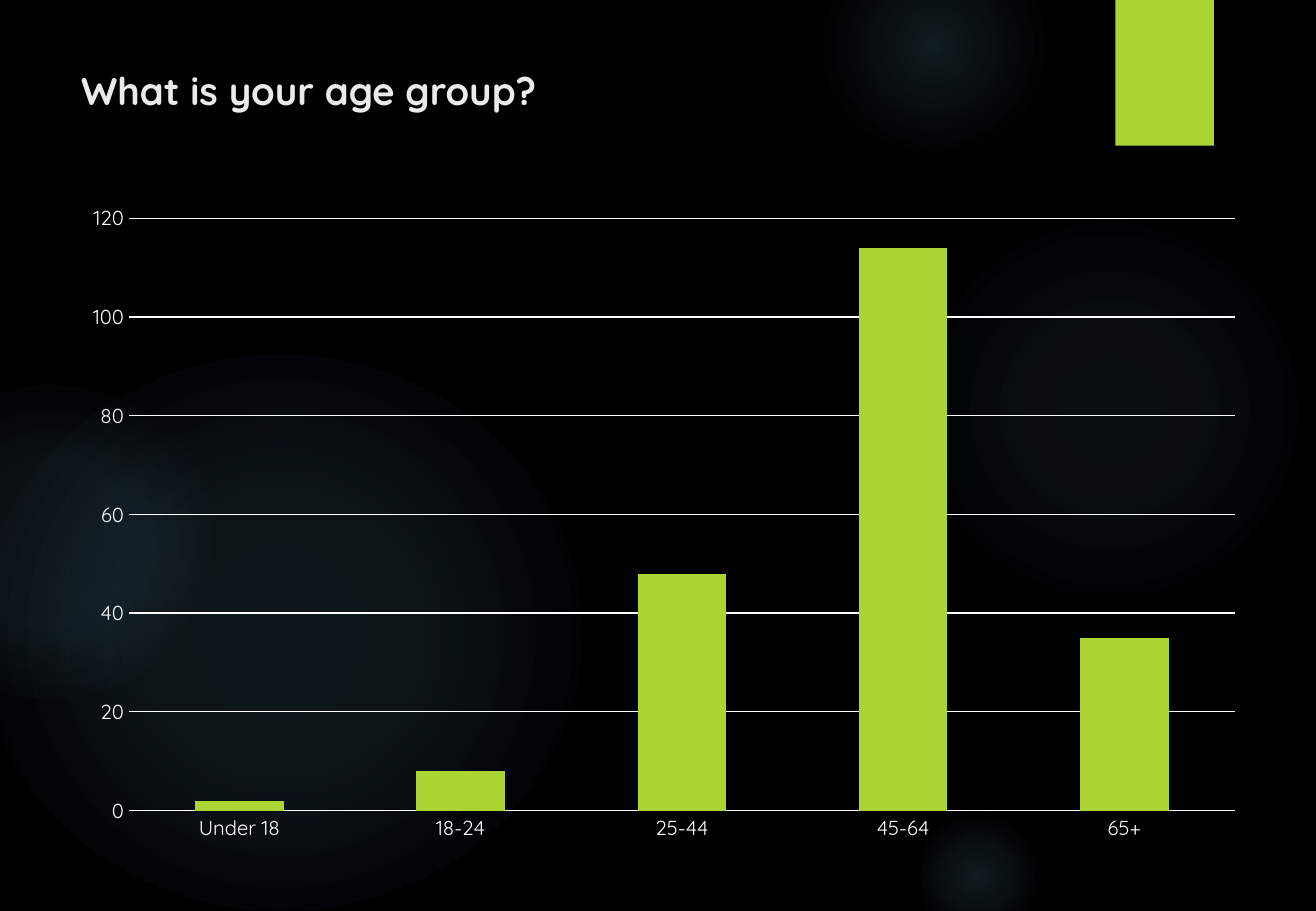
from lxml import etree
from pptx import Presentation
from pptx.chart.data import CategoryChartData as ChartData
from pptx.dml.color import RGBColor
from pptx.enum.chart import XL_CHART_TYPE as Chart, XL_TICK_MARK as Tick
from pptx.enum.shapes import MSO_SHAPE as Shape
from pptx.enum.text import MSO_ANCHOR as Anchor, PP_ALIGN as Align
from pptx.oxml import parse_xml
from pptx.oxml.ns import nsdecls, qn
from pptx.util import Inches, Pt

FONT = "Quicksand"
BLACK, WHITE, PALE = "000000", "FFFFFF", "EBEBEB"
GREEN, BLUE = "ACD433", "7AC4F0"

# Each glow: left, top, width, height, then (position %, opacity %) stops
GLOWS = [
    (7.46, 1.83, 3.34, 3.08, [(0, 7), (36, 6), (69, 0)]),
    (6.74, -0.5, 1.9, 1.75, [(0, 14), (36, 7), (73, 0)]),
    (7.46, 6.67, 1.17, 1.08, [(0, 14), (36, 7), (66, 0)]),
    (-0.18, 2.92, 4.97, 4.58, [(0, 11), (36, 10), (75, 0)]),
    (-0.99, 3.17, 2.8, 2.58, [(0, 8), (36, 8), (72, 0)]),
]
AGES = {"Under 18": 2, "18-24": 8, "25-44": 48, "45-64": 114, "65+": 35}
PLOT = {"x": 0.05, "y": 0.04, "w": 0.93, "h": 0.9}


def color(code):
    return RGBColor.from_string(code)


def paint(fill, code):
    fill.solid()
    fill.fore_color.rgb = color(code)


def style(font, size, code, bold=False):
    font.name = FONT
    font.size = Pt(size)
    font.bold = bold
    font.color.rgb = color(code)


def add_block(slide, kind, box, code):
    shape = slide.shapes.add_shape(kind, *map(Inches, box))
    shape.shadow.inherit = False
    shape.line.fill.background()
    paint(shape.fill, code)
    return shape


def add_glow(slide, box, stops):
    glow = add_block(slide, Shape.OVAL, box, BLUE)
    marks = "".join(
        f'<a:gs pos="{pos * 1000}"><a:srgbClr val="{BLUE}">'
        f'<a:alpha val="{alpha * 1000}"/></a:srgbClr></a:gs>'
        for pos, alpha in stops)
    grad = parse_xml(
        f'<a:gradFill {nsdecls("a")}><a:gsLst>{marks}</a:gsLst>'
        '<a:path path="circle"><a:fillToRect l="50000" t="50000" '
        'r="50000" b="50000"/></a:path></a:gradFill>')
    props = glow.element.spPr
    props.replace(props.find(qn("a:solidFill")), grad)


def add_title(slide, text, box):
    frame = slide.shapes.add_textbox(*map(Inches, box)).text_frame
    frame.word_wrap = True
    frame.vertical_anchor = Anchor.TOP
    para = frame.paragraphs[0]
    para.text = text
    para.alignment = Align.JUSTIFY
    style(para.font, 22.8, PALE, True)


def set_plot(chart):
    """Fix the inner plot area as fractions of the chart."""
    area = chart.element.find(".//" + qn("c:plotArea"))
    old = area.find(qn("c:layout"))
    if old is not None:
        area.remove(old)
    layout = etree.Element(qn("c:layout"))
    manual = etree.SubElement(layout, qn("c:manualLayout"))
    parts = {"layoutTarget": "inner", "xMode": "edge", "yMode": "edge", **PLOT}
    for name, val in parts.items():
        etree.SubElement(manual, qn("c:" + name)).set("val", str(val))
    area.insert(0, layout)


def add_bars(slide, box):
    data = ChartData()
    data.categories = list(AGES)
    data.add_series("Series 1", list(AGES.values()))
    chart = slide.shapes.add_chart(
        Chart.COLUMN_CLUSTERED, *map(Inches, box), data).chart
    chart.has_legend = chart.has_title = False
    style(chart.font, 10, WHITE)

    # Columns
    plot = chart.plots[0]
    plot.gap_width = 150
    plot.vary_by_categories = False
    paint(plot.series[0].format.fill, GREEN)

    # Axes and grid
    for axis in (chart.category_axis, chart.value_axis):
        axis.major_tick_mark = axis.minor_tick_mark = Tick.NONE
        axis.format.line.fill.background()
        style(axis.tick_labels.font, 12, WHITE)
    scale = chart.value_axis
    scale.minimum_scale, scale.maximum_scale, scale.major_unit = 0, 120, 20
    grid = scale.major_gridlines.format.line
    grid.width = Pt(0.75)
    paint(grid.fill, WHITE)
    set_plot(chart)


def main():
    deck = Presentation()
    deck.slide_width, deck.slide_height = Inches(10.83), Inches(7.5)
    slide = deck.slides.add_slide(deck.slide_layouts[6])

    # Backdrop
    paint(slide.background.fill, BLACK)
    for *box, stops in GLOWS:
        add_glow(slide, box, stops)
    add_block(slide, Shape.RECTANGLE, (9.18, 0, 0.81, 1.2), GREEN)

    # Content
    add_title(slide, "What is your age group?", (0.57, 0.5, 8.36, 1.09))
    add_bars(slide, (0.57, 1.58, 9.79, 5.42))
    deck.save("out.pptx")


if __name__ == "__main__":
    main()
